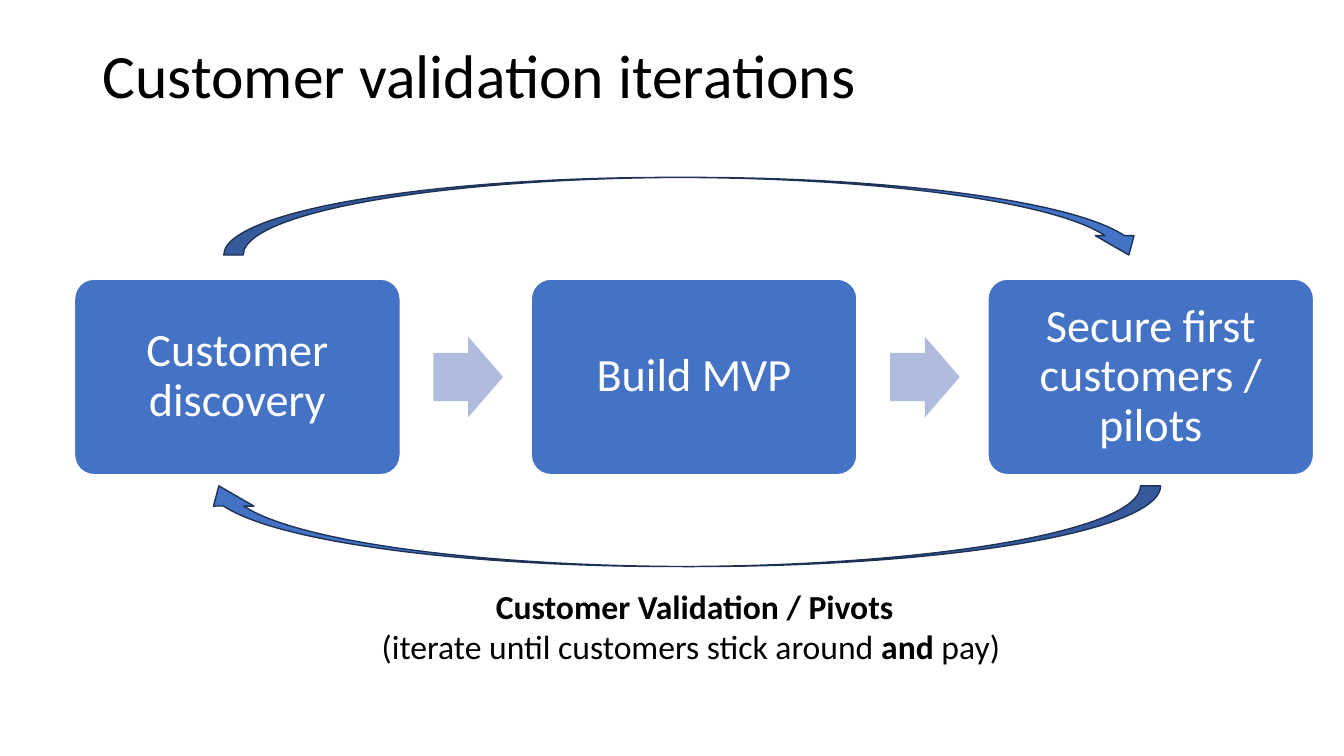
from dataclasses import dataclass

from pptx import Presentation
from pptx.dml.color import RGBColor
from pptx.enum.shapes import MSO_SHAPE as Preset
from pptx.enum.text import MSO_ANCHOR as Anchor, MSO_AUTO_SIZE as AutoSize, PP_ALIGN as Align
from pptx.shapes.autoshape import Shape
from pptx.slide import Slide
from pptx.text.text import Font
from pptx.util import Inches, Length, Pt

SLIDE_W, SLIDE_H = Inches(13.33), Inches(7.5)


@dataclass(frozen=True)
class Theme:
    font: str = "Calibri"
    ink: str = "000000"
    paper: str = "FFFFFF"
    accent: str = "4472C4"
    accent_dark: str = "1E3256"
    accent_pale: str = "B0BCDE"
    title_size: int = 44
    step_size: int = 33
    caption_size: int = 24


@dataclass(frozen=True)
class Area:
    """A rectangle in percent of the slide's width and height."""
    left: float
    top: float
    width: float
    height: float

    def box(self) -> tuple[Length, Length, Length, Length]:
        return (Length(SLIDE_W * self.left / 100), Length(SLIDE_H * self.top / 100),
                Length(SLIDE_W * self.width / 100), Length(SLIDE_H * self.height / 100))

    def moved(self, columns: float) -> "Area":
        return Area(self.left + columns, self.top, self.width, self.height)


@dataclass(frozen=True)
class Loop:
    area: Area
    rotation: int


THEME = Theme()
TITLE_AREA = Area(6.9, 4.13, 86.27, 12.53)
CAPTION_AREA = Area(26.18, 76.8, 51.01, 12.13)
FIRST_STEP = Area(5.55, 36.93, 24.23, 25.87)
FIRST_ARROW = Area(32.25, 44.53, 5.18, 10.67)
STEP_PITCH = 33.98

STEPS = ("Customer\vdiscovery", "Build MVP", "Secure first customers / pilots")
LOOPS = (
    Loop(Area(14.78, 64.27, 71.57, 10.67), rotation=180),
    Loop(Area(16.65, 23.47, 68.79, 10.27), rotation=0),
)
CAPTION = (
    (("Customer Validation / Pivots", True),),
    (("(iterate until customers stick around ", False), ("and", True), (" pay) ", False)),
)


def set_font(font: Font, size: int, color: str) -> None:
    font.name, font.size = THEME.font, Pt(size)
    font.color.rgb = RGBColor.from_string(color)


def add_preset(slide: Slide, preset: Preset, area: Area, fill: str, line: str | None = None) -> Shape:
    shape = slide.shapes.add_shape(preset, *area.box())
    shape.shadow.inherit = False
    shape.fill.solid()
    shape.fill.fore_color.rgb = RGBColor.from_string(fill)
    if line:
        shape.line.color.rgb = RGBColor.from_string(line)
        shape.line.width = Pt(1)
    else:
        shape.line.fill.background()
    return shape


def add_title(slide: Slide, text: str) -> None:
    title = slide.shapes.title
    title.left, title.top, title.width, title.height = TITLE_AREA.box()
    frame = title.text_frame
    frame.text = text
    frame.auto_size = AutoSize.NONE
    frame.vertical_anchor = Anchor.MIDDLE
    heading = frame.paragraphs[0]
    heading.alignment, heading.line_spacing = Align.LEFT, 0.9
    set_font(heading.font, THEME.title_size, THEME.ink)


def add_step(slide: Slide, text: str, area: Area) -> None:
    step = add_preset(slide, Preset.ROUNDED_RECTANGLE, area, THEME.accent, THEME.paper)
    step.adjustments[0] = 0.1
    frame = step.text_frame
    frame.text = text
    frame.word_wrap = True
    frame.vertical_anchor = Anchor.MIDDLE
    frame.margin_left = frame.margin_right = frame.margin_top = frame.margin_bottom = Inches(0.14)
    label = frame.paragraphs[0]
    label.alignment, label.line_spacing = Align.CENTER, 0.9
    set_font(label.font, THEME.step_size, THEME.paper)


def add_step_arrow(slide: Slide, area: Area) -> None:
    arrow = add_preset(slide, Preset.RIGHT_ARROW, area, THEME.accent_pale)
    arrow.adjustments[0] = 0.6
    arrow.adjustments[1] = 0.5


def add_caption(slide: Slide) -> None:
    frame = slide.shapes.add_textbox(*CAPTION_AREA.box()).text_frame
    frame.word_wrap = True
    frame.auto_size = AutoSize.SHAPE_TO_FIT_TEXT
    for index, pieces in enumerate(CAPTION):
        sentence = frame.add_paragraph() if index else frame.paragraphs[0]
        sentence.alignment = Align.CENTER
        set_font(sentence.font, THEME.caption_size, THEME.ink)
        for text, bold in pieces:
            piece = sentence.add_run()
            piece.text, piece.font.bold = text, bold


def main() -> None:
    deck = Presentation()
    deck.slide_width, deck.slide_height = SLIDE_W, SLIDE_H
    slide = deck.slides.add_slide(deck.slide_layouts.get_by_name("Title Only"))
    add_title(slide, "Customer validation iterations")
    for index, step in enumerate(STEPS):
        add_step(slide, step, FIRST_STEP.moved(index * STEP_PITCH))
        if index < len(STEPS) - 1:
            add_step_arrow(slide, FIRST_ARROW.moved(index * STEP_PITCH))
    for loop in LOOPS:
        arc = add_preset(slide, Preset.CURVED_DOWN_ARROW, loop.area, THEME.accent, THEME.accent_dark)
        arc.rotation = loop.rotation
    add_caption(slide)
    deck.save("out.pptx")


if __name__ == "__main__":
    main()
